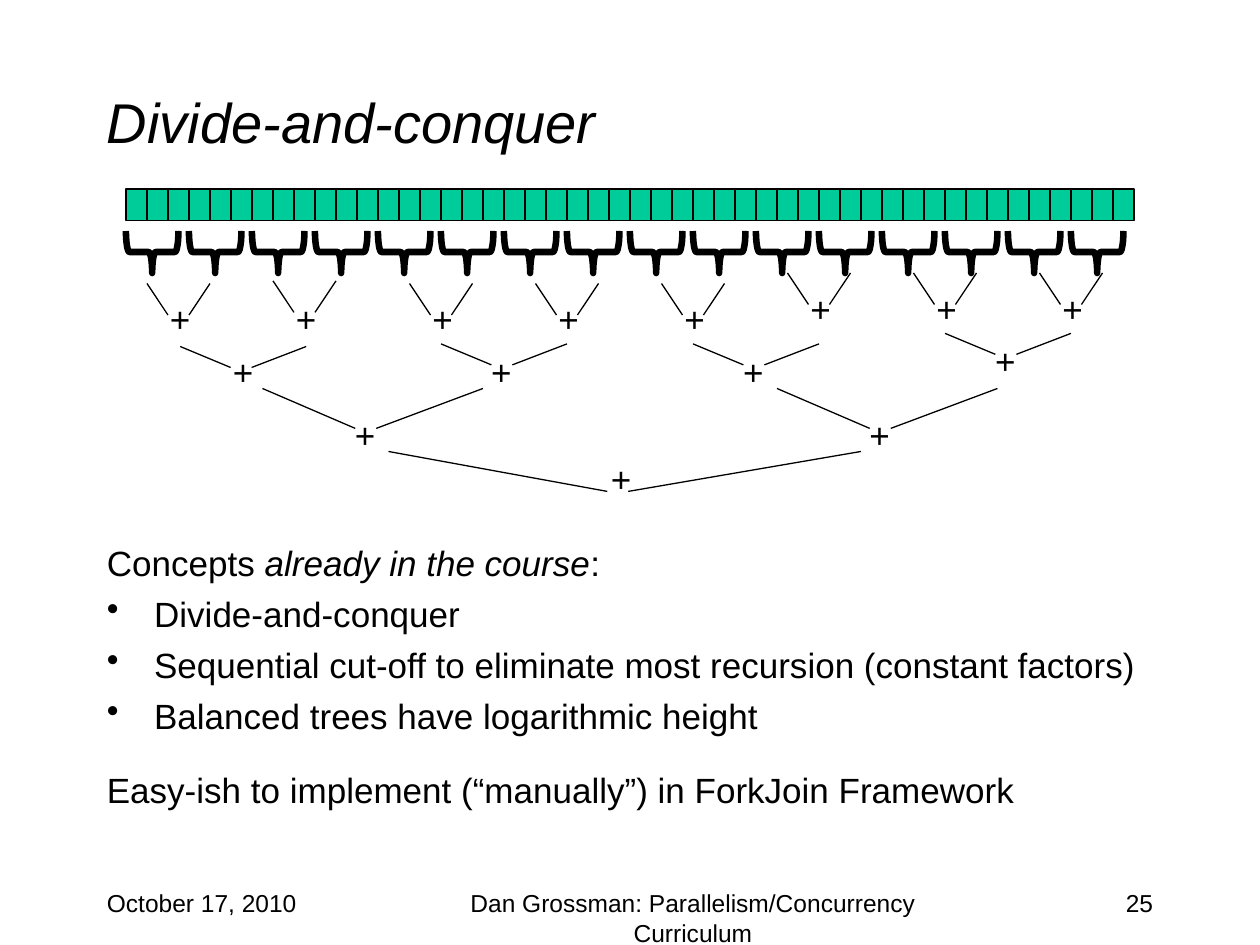
from lxml import etree
from pptx import Presentation
from pptx import util as u
from pptx.dml.color import RGBColor
from pptx.enum import shapes, text
from pptx.oxml.ns import qn


def color(value):
    return RGBColor.from_string(value)


def format_text(paragraph, content, size=20, italic=False, ink="000000", font="Arial"):
    run = paragraph.add_run()
    run.text = content
    run.font.name = font
    run.font.size = u.Pt(size)
    run.font.italic = italic
    run.font.color.rgb = color(ink)


class SlideBuilder:
    ink = "000000"
    cell_fill = "00CC99"
    thin = 0.75
    thick = 3.75

    def __init__(self, slide):
        self.slide = slide

    def text_box(self, left, top, width, height, wrap=True, anchor=text.MSO_ANCHOR.TOP):
        shape = self.slide.shapes.add_textbox(u.Pt(left), u.Pt(top), u.Pt(width), u.Pt(height))
        shape.text_frame.word_wrap = wrap
        shape.text_frame.vertical_anchor = anchor
        return shape.text_frame

    def label(self, content, left, top, width, height, align=text.PP_ALIGN.LEFT,
              wrap=True, anchor=text.MSO_ANCHOR.TOP, **style):
        frame = self.text_box(left, top, width, height, wrap, anchor)
        paragraph = frame.paragraphs[0]
        paragraph.alignment = align
        format_text(paragraph, content, **style)

    def shape(self, kind, left, top, width, height, line_width, fill=None):
        shape = self.slide.shapes.add_shape(kind, u.Pt(left), u.Pt(top), u.Pt(width), u.Pt(height))
        shape.shadow.inherit = False
        shape.line.color.rgb = color(self.ink)
        shape.line.width = u.Pt(line_width)
        if fill:
            shape.fill.solid()
            shape.fill.fore_color.rgb = color(fill)
        else:
            shape.fill.background()
        return shape

    def cell(self, left, top, width, height):
        self.shape(shapes.MSO_SHAPE.RECTANGLE, left, top, width, height, self.thin, self.cell_fill)

    def brace(self, left, top, width, height):
        brace = self.shape(shapes.MSO_SHAPE.LEFT_BRACE, left, top, width, height, self.thick)
        brace.rotation = 270

    def line(self, start_x, start_y, end_x, end_y):
        connector = self.slide.shapes.add_connector(
            shapes.MSO_CONNECTOR.STRAIGHT, u.Pt(start_x), u.Pt(start_y), u.Pt(end_x), u.Pt(end_y))
        connector.line.color.rgb = color(self.ink)
        connector.line.width = u.Pt(self.thin)
        etree.SubElement(connector._element.spPr, qn("a:effectLst"))

    def join(self, left, top, span, reach, drop, plus_left, plus_top):
        self.line(left, top, left + reach, top + drop)
        self.line(left + span, top, left + reach + 12, top + drop)
        self.label("+", plus_left, plus_top, 26.1, 31.5, wrap=False)

    def body(self, left, top, width, height, top_margin, paragraphs):
        frame = self.text_box(left, top, width, height)
        frame.margin_top = u.Pt(top_margin)
        for index, (space, bullet, runs) in enumerate(paragraphs):
            paragraph = frame.add_paragraph() if index else frame.paragraphs[0]
            paragraph.space_before = u.Pt(space)
            if bullet:
                properties = paragraph._p.get_or_add_pPr()
                properties.set("marL", str(u.Pt(27)))
                properties.set("indent", str(u.Pt(-27)))
                etree.SubElement(properties, qn("a:buChar"), char="•")
            for content, italic in runs:
                format_text(paragraph, content, italic=italic)


def main():
    presentation = Presentation()
    presentation.slide_width, presentation.slide_height = u.Pt(720), u.Pt(540)
    builder = SlideBuilder(presentation.slides.add_slide(presentation.slide_layouts[6]))

    builder.label("Divide-and-conquer", 54, 24, 612, 90, anchor=text.MSO_ANCHOR.MIDDLE,
                  size=32, italic=True)
    builder.label("October 17, 2010", 54, 504, 150, 36, size=14)
    builder.label("25", 516, 504, 150, 36, align=text.PP_ALIGN.RIGHT, size=14)
    builder.label("Dan Grossman: Parallelism/Concurrency Curriculum", 228, 504, 336, 36,
                  align=text.PP_ALIGN.CENTER, size=14)

    for index in range(48):
        builder.cell(72 + 12 * index, 108, 12, 18)
    for index in range(16):
        builder.brace(75 + 36 * index, 129, 24, 30)

    pair_joins = [(84, 162, 166.5), (156, 160.5, 166.5), (234, 162, 166.5), (306, 162, 166.5),
                  (378, 162, 166.5), (450, 156, 160.5), (522, 156, 160.5), (594, 156, 160.5)]
    for left, top, plus_top in pair_joins:
        builder.join(left, top, 36, 12, 18, left + 6, plus_top)
    quad_joins = [(103, 198, 126, 196.5), (252, 196.5, 273.6, 196.5),
                  (396, 196.5, 417.6, 196.5), (540, 190.5, 561.6, 190.5)]
    for left, top, plus_left, plus_top in quad_joins:
        builder.join(left, top, 72, 28.8, 12, plus_left, plus_top)
    for left in (150, 444):
        builder.join(left, 222, 126, 53, 22.8, left + 45.7, 232.6)
    builder.join(222, 258, 270, 125, 22.8, 342, 258)

    builder.body(54, 288, 612, 204, 21.6, [
        (0, False, [("Concepts ", False), ("already in the course", True), (":", False)]),
        (5, True, [("Divide-and-conquer", False)]),
        (5, True, [("Sequential cut-off to eliminate most recursion (constant factors)", False)]),
        (5, True, [("Balanced trees have logarithmic height", False)]),
        (18.7, False, [("Easy-ish to implement (“manually”) in ForkJoin Framework", False)]),
    ])
    presentation.save("out.pptx")


if __name__ == "__main__":
    main()
